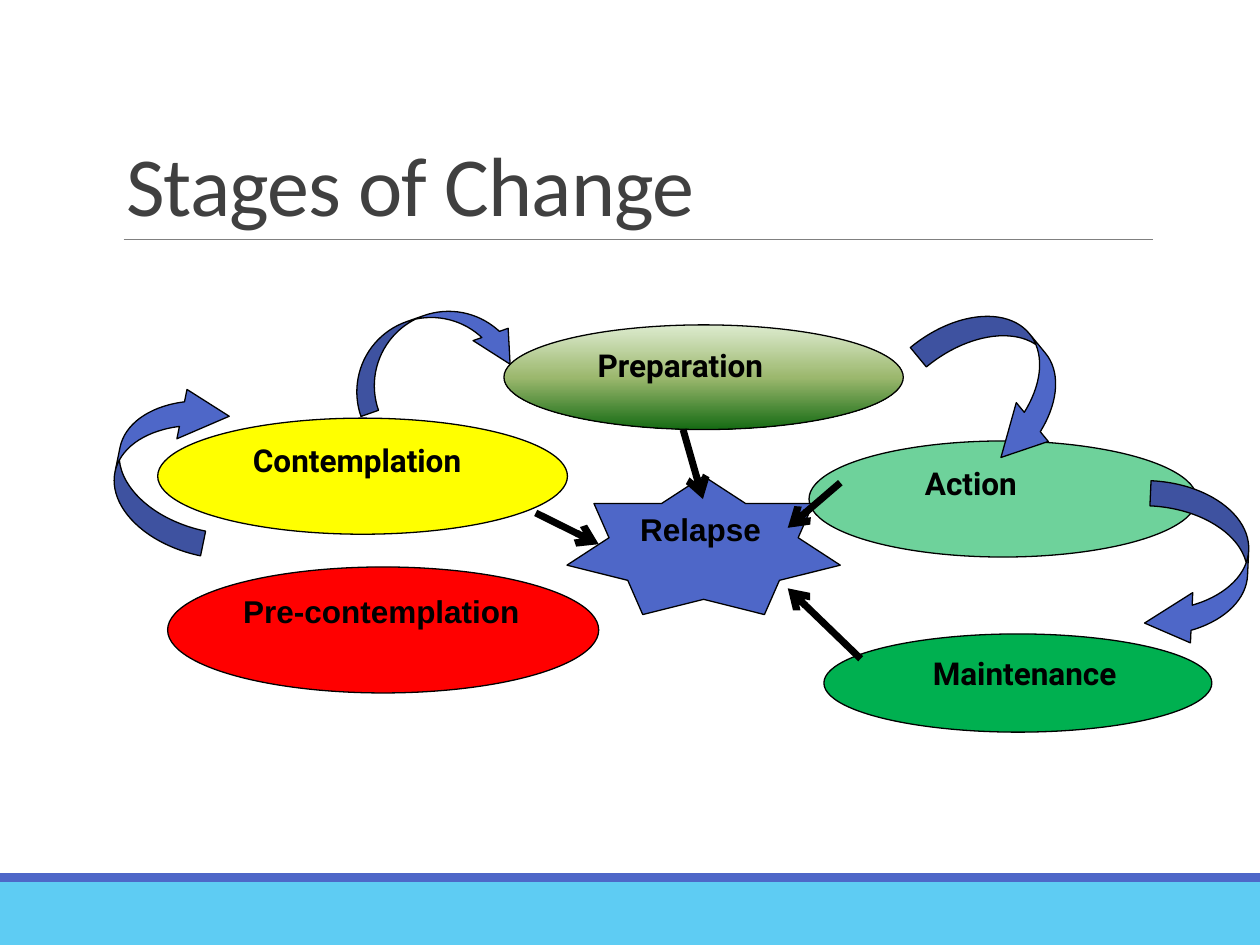
from copy import deepcopy
from dataclasses import dataclass
from typing import Any, Optional

import pptx
from lxml import etree
from pptx import util as u
from pptx.dml import color
from pptx.enum import shapes, text
from pptx.oxml import ns

BLACK = color.RGBColor(0x00, 0x00, 0x00)
BLUE = color.RGBColor(0x4E, 0x67, 0xC8)
SKY = color.RGBColor(0x5E, 0xCC, 0xF3)
GRAY = color.RGBColor(0x80, 0x80, 0x80)
CHARCOAL = color.RGBColor(0x40, 0x40, 0x40)
RED = color.RGBColor(0xFF, 0x00, 0x00)
YELLOW = color.RGBColor(0xFF, 0xFF, 0x00)
GREEN = color.RGBColor(0x00, 0xB0, 0x50)
GRADIENT = (
    (0.0, color.RGBColor(0xDD, 0xEB, 0xCF)),
    (0.5, color.RGBColor(0x9C, 0xB8, 0x6E)),
    (1.0, color.RGBColor(0x15, 0x6B, 0x13)),
)
STAGE_FRAME = {"word_wrap": True, "vertical_anchor": text.MSO_ANCHOR.TOP}
STAGE_FONT = {"size": u.Pt(18), "bold": True}
TITLE_BOX = {"left": u.Cm(2.29), "top": u.Cm(0.79), "width": u.Cm(20.96), "height": u.Cm(4.04)}
TITLE_FRAME = {
    "word_wrap": True,
    "auto_size": text.MSO_AUTO_SIZE.NONE,
    "vertical_anchor": text.MSO_ANCHOR.BOTTOM,
}
TITLE_PARAGRAPH = {"alignment": text.PP_ALIGN.LEFT, "line_spacing": 0.85}
TITLE_FONT = {"size": u.Pt(48), "name": "Calibri"}


@dataclass(frozen=True)
class Stage:
    label: str
    left: float
    top: float
    width: float
    height: float
    fill: Optional[color.RGBColor]
    font: str = "Roboto"
    inset: float = 0.25
    opacity: int = 100
    kind: shapes.MSO_SHAPE = shapes.MSO_SHAPE.OVAL


@dataclass(frozen=True)
class Curve:
    left: float
    top: float
    rotation: float
    width: float = 3.38
    height: float = 2.03


@dataclass(frozen=True)
class Segment:
    x1: float
    y1: float
    x2: float
    y2: float


STAGES = (
    Stage("Pre-contemplation", 3.38, 11.43, 8.69, 2.54, RED, font="Arial"),
    Stage("Contemplation", 3.18, 8.43, 8.26, 2.34, YELLOW, inset=0.71),
    Stage("Preparation", 10.16, 6.55, 8.05, 2.11, None, inset=0.71),
    Stage("Action", 16.31, 8.89, 7.82, 2.34, GREEN, inset=1.19, opacity=57),
    Stage("Maintenance", 16.61, 12.78, 7.82, 1.98, GREEN, inset=1.05),
    Stage("Relapse", 11.43, 9.6, 5.51, 2.79, BLUE, font="Arial",
          kind=shapes.MSO_SHAPE.STAR_7_POINT),
)
CURVES = (
    Curve(1.7, 8.33, 281.6),
    Curve(18.52, 6.65, 50.5),
    Curve(6.93, 6.35, 340.7, 3.56, 1.5),
    Curve(22.45, 10.41, 92.6),
)
RELAPSE_ARROWS = (
    Segment(10.8, 10.34, 12.07, 10.97),
    Segment(13.77, 8.66, 14.17, 10.06),
    Segment(17.35, 13.28, 15.88, 11.86),
    Segment(16.94, 9.73, 15.88, 10.64),
)


def apply_format(target: Any, values: dict) -> None:
    for name, value in values.items():
        setattr(target, name, value)


def add_shape(slide: Any, kind: shapes.MSO_SHAPE, left: float, top: float,
              width: float, height: float, fill: Optional[color.RGBColor],
              outlined: bool = True) -> Any:
    shape = slide.shapes.add_shape(kind, u.Cm(left), u.Cm(top), u.Cm(width), u.Cm(height))
    shape.shadow.inherit = False
    if fill is not None:
        shape.fill.solid()
        shape.fill.fore_color.rgb = fill
    if outlined:
        shape.line.color.rgb = BLACK
        shape.line.width = u.Pt(0.75)
    else:
        shape.line.fill.background()
    return shape


def fill_gradient(shape: Any) -> None:
    shape.fill.gradient()
    shape.fill.gradient_angle = 270
    first = shape._element.spPr.find(".//" + ns.qn("a:gs"))
    first.addnext(deepcopy(first))
    for stop, (position, rgb) in zip(shape.fill.gradient_stops, GRADIENT):
        stop.position = position
        stop.color.rgb = rgb


def add_stage(slide: Any, stage: Stage) -> None:
    shape = add_shape(slide, stage.kind, stage.left, stage.top,
                      stage.width, stage.height, stage.fill)
    if stage.fill is None:
        fill_gradient(shape)
    if stage.opacity < 100:
        solid = shape._element.spPr.find(ns.qn("a:solidFill"))
        etree.SubElement(solid[0], ns.qn("a:alpha"), val=str(stage.opacity * 1000))
    frame = shape.text_frame
    apply_format(frame, {**STAGE_FRAME, "margin_left": u.Cm(stage.inset)})
    paragraph = frame.paragraphs[0]
    paragraph.alignment = text.PP_ALIGN.LEFT
    run = paragraph.add_run()
    run.text = stage.label
    apply_format(run.font, {**STAGE_FONT, "name": stage.font})
    run.font.color.rgb = BLACK


def add_curve(slide: Any, curve: Curve) -> None:
    shape = add_shape(slide, shapes.MSO_SHAPE.CURVED_DOWN_ARROW, curve.left, curve.top,
                      curve.width, curve.height, BLUE)
    shape.rotation = curve.rotation
    for index, value in enumerate((0.25, 0.5, 0.464)):
        shape.adjustments[index] = value


def add_line(slide: Any, segment: Segment, rgb: color.RGBColor, width: float,
             arrow: bool = False) -> None:
    connector = slide.shapes.add_connector(
        shapes.MSO_CONNECTOR.STRAIGHT, u.Cm(segment.x1), u.Cm(segment.y1),
        u.Cm(segment.x2), u.Cm(segment.y2))
    connector.line.color.rgb = rgb
    connector.line.width = u.Pt(width)
    if arrow:
        etree.SubElement(connector.line._get_or_add_ln(), ns.qn("a:tailEnd"), type="arrow")
    etree.SubElement(connector._element.spPr, ns.qn("a:effectLst"))


def add_title(slide: Any, wording: str) -> None:
    title = slide.shapes.title
    apply_format(title, TITLE_BOX)
    apply_format(title.text_frame, TITLE_FRAME)
    paragraph = title.text_frame.paragraphs[0]
    apply_format(paragraph, TITLE_PARAGRAPH)
    run = paragraph.add_run()
    run.text = wording
    apply_format(run.font, TITLE_FONT)
    run.font.color.rgb = CHARCOAL
    run._r.get_or_add_rPr().set("spc", "-50")


def main() -> None:
    presentation = pptx.Presentation()
    presentation.slide_width = u.Cm(25.4)
    presentation.slide_height = u.Cm(19.05)
    slide = presentation.slides.add_slide(presentation.slide_layouts[5])
    add_title(slide, "Stages of Change")
    for top, height, fill in ((17.78, 1.27, SKY), (17.6, 0.18, BLUE)):
        add_shape(slide, shapes.MSO_SHAPE.RECTANGLE, 0, top, 25.4, height, fill, outlined=False)
    add_line(slide, Segment(2.49, 4.83, 23.24, 4.83), GRAY, 0.5)
    for stage in STAGES:
        add_stage(slide, stage)
    for curve in CURVES:
        add_curve(slide, curve)
    for segment in RELAPSE_ARROWS:
        add_line(slide, segment, BLACK, 4, arrow=True)
    presentation.save("out.pptx")


if __name__ == "__main__":
    main()
